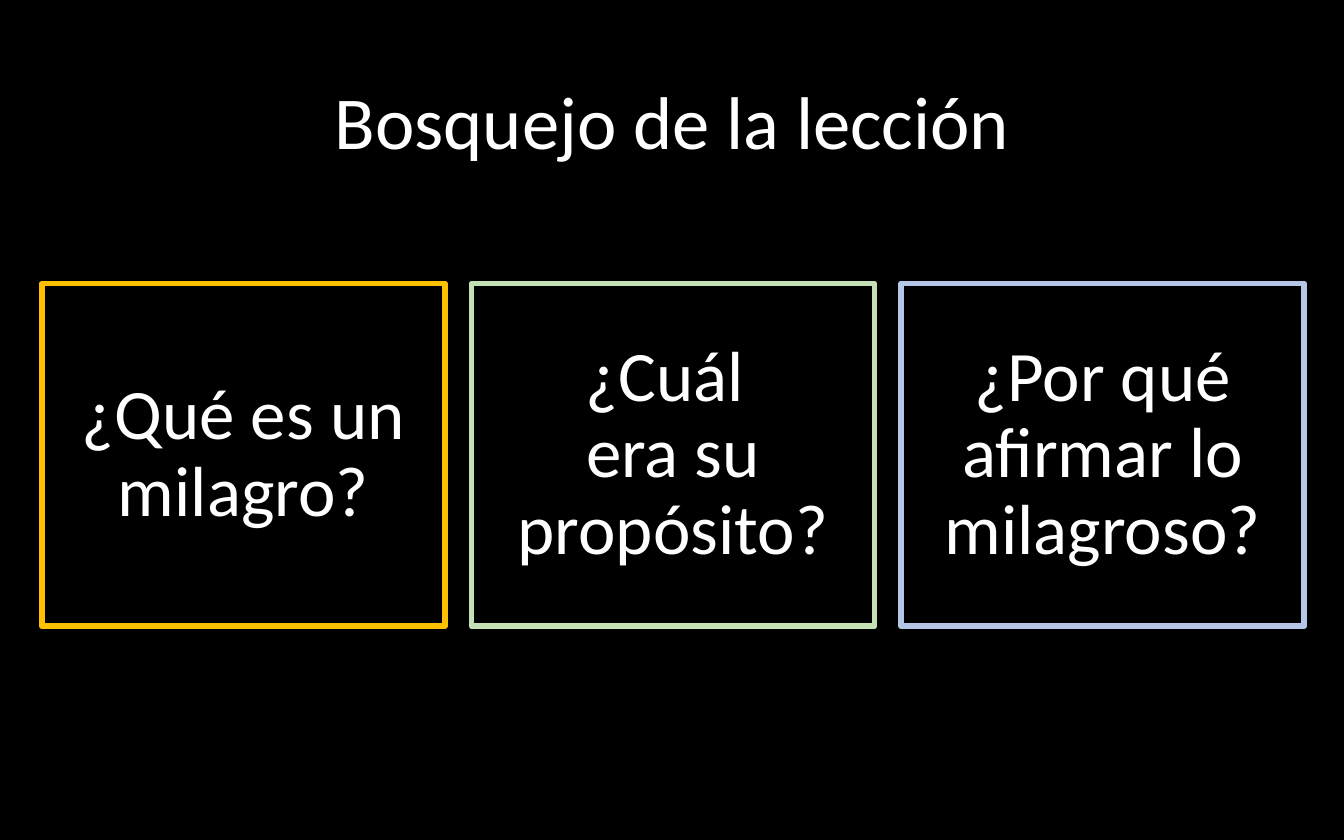
from typing import NamedTuple

from pptx import Presentation
from pptx.dml.color import RGBColor
from pptx.enum.shapes import MSO_SHAPE as Shape
from pptx.enum.text import MSO_ANCHOR as Anchor, PP_ALIGN as Align
from pptx.util import Cm, Pt

COLORS = {
    "black": "000000",
    "white": "FFFFFF",
    "gold": "FFC000",
    "green": "C5E0B4",
    "blue": "B4C7E7",
}
LEFT, TOP, WIDTH, HEIGHT = 0.79, 5.36, 7.62, 6.48
STEP = 8.12


class Card(NamedTuple):
    text: str
    color: str


CARDS = [
    Card("¿Qué es un milagro?", "gold"),
    Card("¿Cuál \vera su propósito?", "green"),
    Card("¿Por qué afirmar lo milagroso?", "blue"),
]


def rgb(name: str) -> RGBColor:
    return RGBColor.from_string(COLORS[name])


def write(shape, text: str, size: int) -> None:
    """Put centred white text in the middle of a shape."""
    frame = shape.text_frame
    frame.word_wrap = True
    frame.vertical_anchor = Anchor.MIDDLE
    frame.text = text
    para = frame.paragraphs[0]
    for key, value in {"alignment": Align.CENTER, "line_spacing": 0.9}.items():
        setattr(para, key, value)
    for run in para.runs:
        for key, value in {"name": "Calibri", "size": Pt(size)}.items():
            setattr(run.font, key, value)
        run.font.color.rgb = rgb("white")


def draw_card(slide, card: Card, left: float) -> None:
    box = slide.shapes.add_shape(
        Shape.RECTANGLE, Cm(left), Cm(TOP), Cm(WIDTH), Cm(HEIGHT)
    )
    box.shadow.inherit = False
    box.fill.background()
    box.line.color.rgb = rgb(card.color)
    box.line.width = Pt(3)
    write(box, card.text, 38)


def main() -> None:
    deck = Presentation()
    deck.slide_width, deck.slide_height = Cm(25.4), Cm(15.88)
    slide = deck.slides.add_slide(deck.slide_layouts[6])
    fill = slide.background.fill
    fill.solid()
    fill.fore_color.rgb = rgb("black")

    title = slide.shapes.add_textbox(Cm(1.75), Cm(0.84), Cm(21.9), Cm(3.07))
    write(title, "Bosquejo de la lección", 40)
    for index, card in enumerate(CARDS):
        draw_card(slide, card, LEFT + index * STEP)
    deck.save("out.pptx")


if __name__ == "__main__":
    main()
